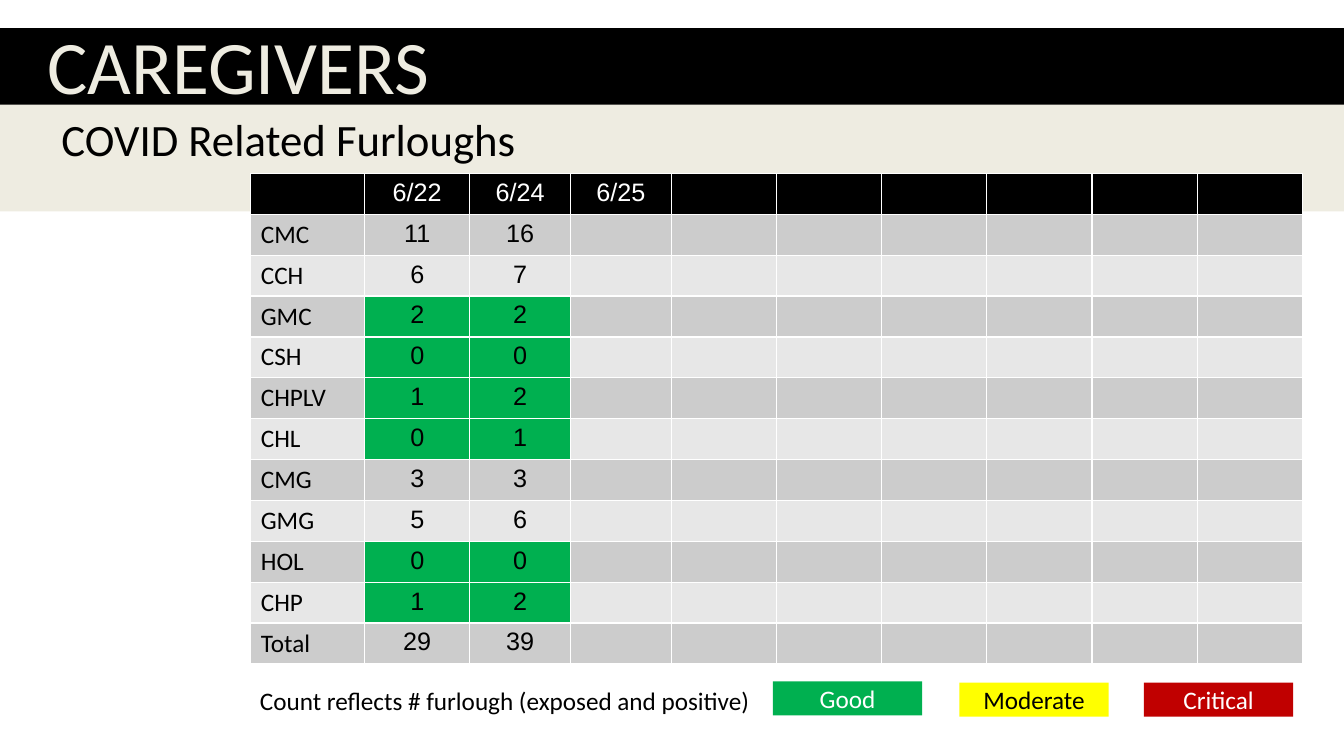
import pptx
import pptx.util
import pptx.dml.color
import pptx.enum.shapes
import pptx.enum.text

Cm = pptx.util.Cm
PP_ALIGN = pptx.enum.text.PP_ALIGN
ANCHOR = pptx.enum.text.MSO_ANCHOR

COLORS = {
    "black": "000000", "white": "FFFFFF", "cream": "EEECE1",
    "good": "00B050", "moderate": "FFFF00", "critical": "C00000",
    "band_dark": "CCCCCC", "band_light": "E7E7E7",
}
TITLE = "CAREGIVERS"
SUBTITLE = "COVID Related Furloughs"
FOOTNOTE = "Count reflects # furlough (exposed and positive)"
LEGEND = [
    ("Good", "good", "white", 19.48, 17.17),
    ("Critical", "critical", "white", 28.83, 17.2),
    ("Moderate", "moderate", "black", 24.18, 17.2),
]
DATES = ["6/22", "6/24", "6/25"]
FURLOUGHS = [
    ("CMC", 11, 16), ("CCH", 6, 7), ("GMC", 2, 2), ("CSH", 0, 0),
    ("CHPLV", 1, 2), ("CHL", 0, 1), ("CMG", 3, 3), ("GMG", 5, 6),
    ("HOL", 0, 0), ("CHP", 1, 2), ("Total", 29, 39),
]
GOOD_LIMIT = 2
COLUMN_WIDTHS = [2.87, 2.65, 2.54, 2.54] + [2.65] * 6
ROW_HEIGHT = 1.03
SLIDE_WIDTH = 33.87


def rgb(color):
    return pptx.dml.color.RGBColor.from_string(COLORS[color])


def write(tf, text, size, color, font="Calibri", align=PP_ALIGN.LEFT):
    tf.text = text
    p = tf.paragraphs[0]
    p.alignment = align
    p.font.size = pptx.util.Pt(size)
    for r in p.runs:
        r.font.size = pptx.util.Pt(size)
        r.font.name = font
        r.font.bold = False
        r.font.color.rgb = rgb(color)


def add_box(s, left, top, width, height, color):
    sp = s.shapes.add_shape(pptx.enum.shapes.MSO_SHAPE.RECTANGLE,
                            Cm(left), Cm(top), Cm(width), Cm(height))
    sp.shadow.inherit = False
    sp.fill.solid()
    sp.fill.fore_color.rgb = rgb(color)
    sp.line.fill.background()
    return sp


def add_text(s, left, top, width, height, text, size, color, wrap=False):
    tf = s.shapes.add_textbox(Cm(left), Cm(top), Cm(width), Cm(height)).text_frame
    tf.word_wrap = wrap
    write(tf, text, size, color)
    return tf


def add_furlough_table(s):
    rows = [("", *DATES)] + FURLOUGHS
    table = s.shapes.add_table(
        len(rows), len(COLUMN_WIDTHS), Cm(6.32), Cm(4.37),
        Cm(sum(COLUMN_WIDTHS)), Cm(ROW_HEIGHT * len(rows))).table
    for column, width in zip(table.columns, COLUMN_WIDTHS):
        column.width = Cm(width)
    for i, values in enumerate(rows):
        table.rows[i].height = Cm(ROW_HEIGHT)
        band = "black" if i == 0 else "band_dark" if i % 2 else "band_light"
        for j in range(len(COLUMN_WIDTHS)):
            cell = table.cell(i, j)
            value = values[j] if j < len(values) else ""
            good = isinstance(value, int) and value <= GOOD_LIMIT
            cell.fill.solid()
            cell.fill.fore_color.rgb = rgb("good" if good else band)
            write(cell.text_frame, str(value), 18,
                  "black" if i else "white",
                  "Arial" if j else "Calibri",
                  PP_ALIGN.CENTER if j else PP_ALIGN.LEFT)


def main():
    prs = pptx.Presentation()
    prs.slide_width, prs.slide_height = Cm(SLIDE_WIDTH), Cm(19.05)
    s = prs.slides.add_slide(prs.slide_layouts[6])

    add_box(s, 0, 0.71, SLIDE_WIDTH, 4.11, "black")
    tf = add_text(s, 0.94, 0.71, 27.18, 4.19, TITLE, 54, "cream", True)
    tf.paragraphs[0].line_spacing = 0.85

    for label, color, text_color, left, top in LEGEND:
        tf = add_box(s, left, top, 3.76, 0.86, color).text_frame
        tf.vertical_anchor = ANCHOR.MIDDLE
        write(tf, label, 18, text_color, align=PP_ALIGN.CENTER)
    add_text(s, 6.3, 17.15, 13.28, 1.02, FOOTNOTE, 18, "black")

    add_box(s, 0, 2.64, SLIDE_WIDTH, 2.69, "cream")
    add_furlough_table(s)
    add_text(s, 1.3, 2.69, 12.5, 1.63, SUBTITLE, 32, "black")
    prs.save("out.pptx")


if __name__ == "__main__":
    main()
